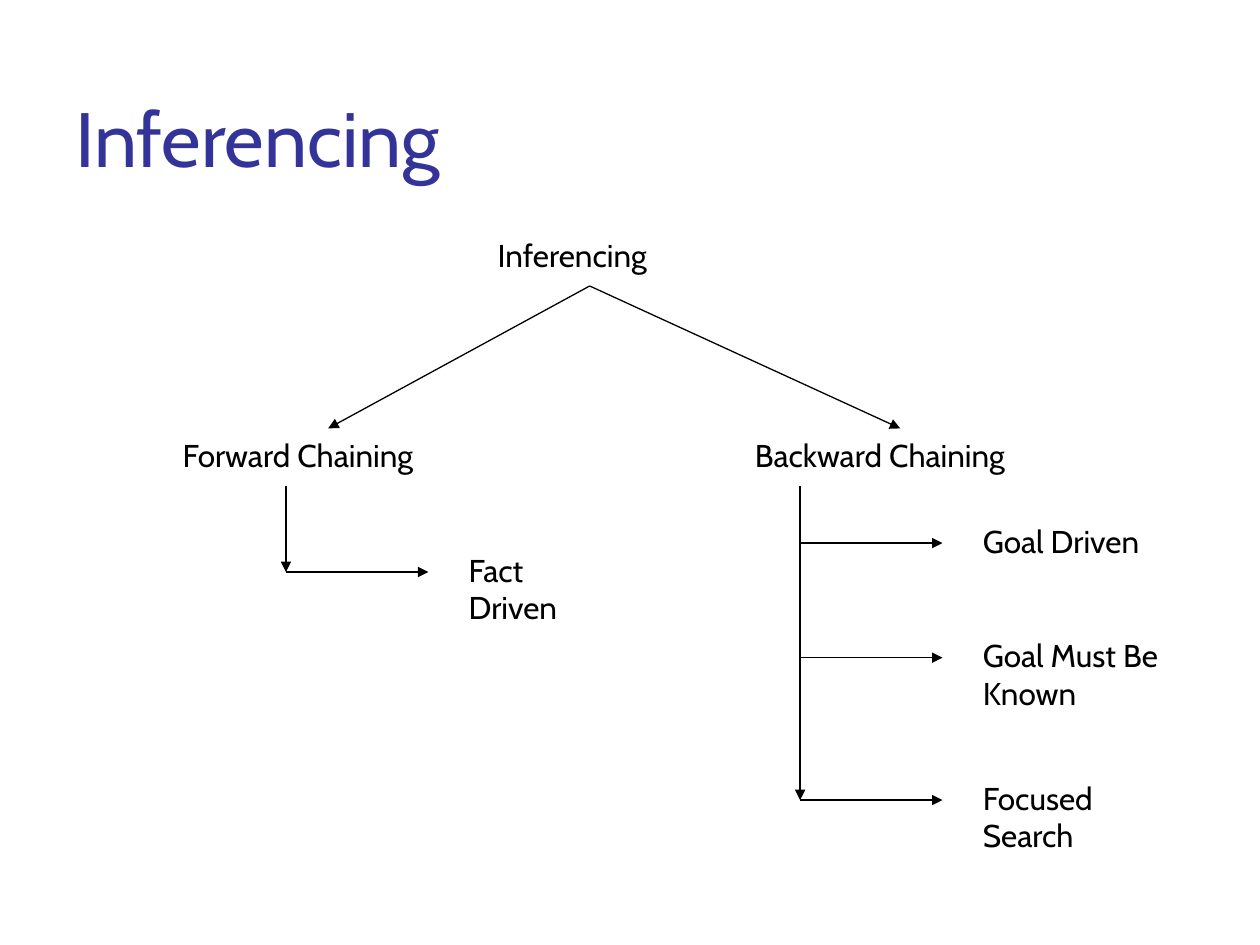
import pptx
import pptx.dml.color
import pptx.enum.shapes
import pptx.enum.text
import pptx.oxml
import pptx.util

Inches = pptx.util.Inches
Anchor = pptx.enum.text.MSO_ANCHOR
BLACK = "000000"
NAVY = "333399"
FONT = "Cabin"
PADS = {"margin_left": 0.09, "margin_top": 0.06, "margin_right": 0.09, "margin_bottom": 0.04}
HEADS = {"margin_left": 0.1, "margin_top": 0.04, "margin_right": 0.1, "margin_bottom": 0.05}
NS = 'xmlns:a="http://schemas.openxmlformats.org/drawingml/2006/main"'


def paint(code):
    return pptx.dml.color.RGBColor.from_string(code)


def apply(thing, look):
    for name, value in look.items():
        setattr(thing, name, value)


def write(slide, box, words, size=18, color=BLACK, pads=PADS, anchor=Anchor.TOP):
    frame = slide.shapes.add_textbox(*map(Inches, box)).text_frame
    apply(frame, {"word_wrap": True, "vertical_anchor": anchor})
    apply(frame, {side: Inches(gap) for side, gap in pads.items()})
    run = frame.paragraphs[0].add_run()
    run.text = words
    apply(run.font, {"name": FONT, "size": pptx.util.Pt(size)})
    run.font.color.rgb = paint(color)


def arrow(slide, start, end):
    kind = pptx.enum.shapes.MSO_CONNECTOR.STRAIGHT
    link = slide.shapes.add_connector(kind, *map(Inches, start + end))
    link.line.color.rgb = paint(BLACK)
    link.line.width = pptx.util.Pt(0.75)
    link.line._get_or_add_ln().append(pptx.oxml.parse_xml(f'<a:tailEnd {NS} type="triangle"/>'))
    link._element.spPr.append(pptx.oxml.parse_xml(f"<a:effectLst {NS}/>"))


def title(slide, box):
    write(slide, box, "Inferencing", 44, NAVY, HEADS, Anchor.BOTTOM)


def root(slide, box, fork, tips):
    write(slide, box, "Inferencing")
    for tip in tips:
        arrow(slide, fork, tip)


def branch(slide, box, words, inset, wide, leaves):
    left, top = box[:2]
    stem = left + inset
    write(slide, box, words)
    arrow(slide, (stem, top + 0.46), (stem, leaves[-1][1]))
    for leaf, level, tall in leaves:
        arrow(slide, (stem, level), (stem + 1.13, level))
        write(slide, (stem + 1.36, level - 0.23, wide, tall), leaf)


def main():
    deck = pptx.Presentation()
    apply(deck, {"slide_width": Inches(10), "slide_height": Inches(7.5)})
    slide = deck.slides.add_slide(deck.slide_layouts[6])
    front = (1.36, 3.4, 2.49, 0.34)
    back = (5.9, 3.4, 2.49, 0.34)
    tips = [(left + wide / 2, top) for left, top, wide, tall in (front, back)]
    title(slide, (0.5, 0.34, 9, 1.16))
    root(slide, (3.86, 1.81, 1.64, 0.45), (4.68, 2.27), tips)
    branch(slide, front, "Forward Chaining", 0.91, 1.36, [("Fact Driven", 4.54, 0.34)])
    branch(slide, back, "Backward Chaining", 0.45, 1.59, [
        ("Goal Driven", 4.31, 0.45),
        ("Goal Must Be Known", 5.22, 0.6),
        ("Focused Search", 6.35, 0.6),
    ])
    deck.save("out.pptx")


if __name__ == "__main__":
    main()
